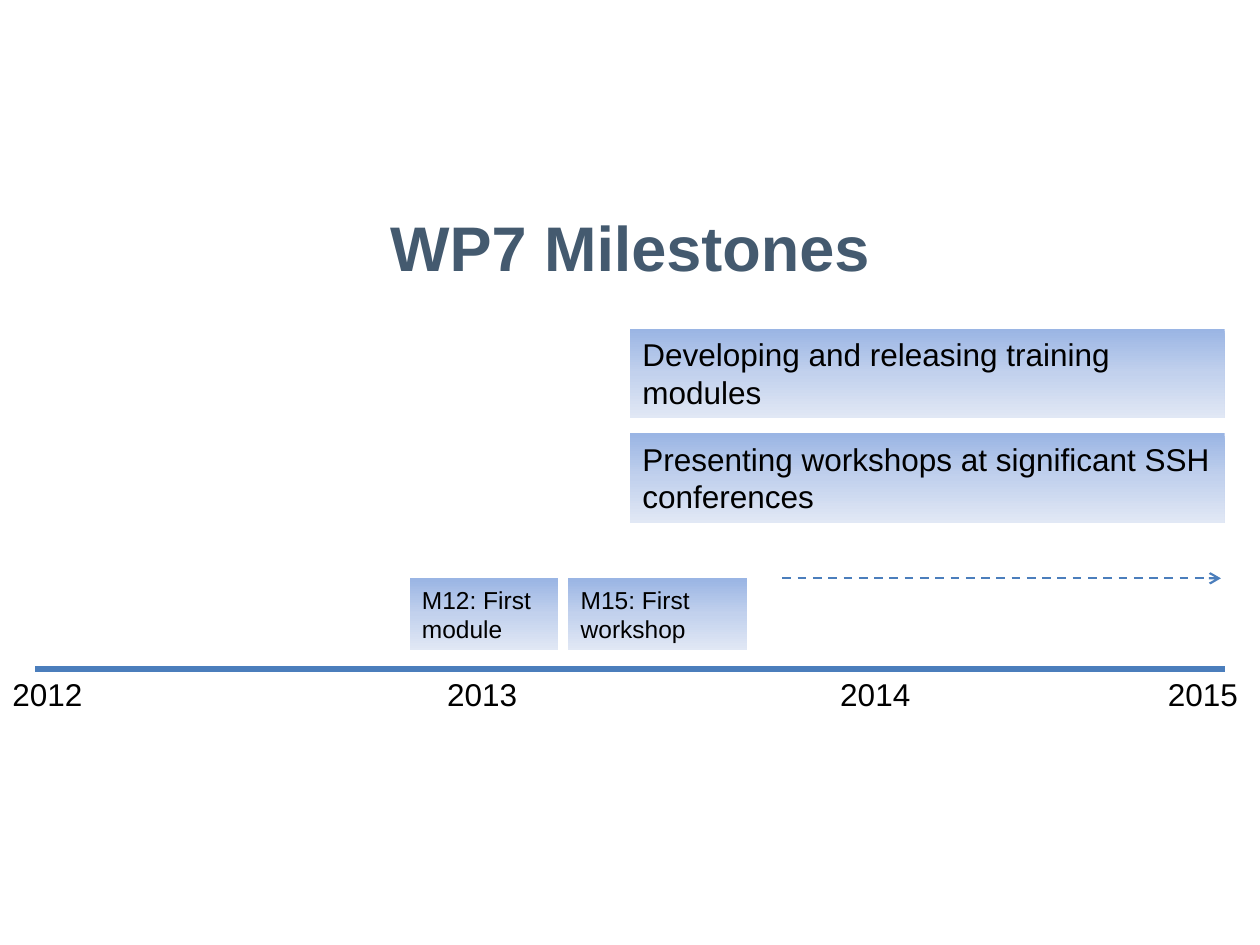
from copy import deepcopy

from lxml.etree import SubElement
from pptx import Presentation
from pptx.dml.color import RGBColor
from pptx.enum.dml import MSO_LINE_DASH_STYLE as DASH
from pptx.enum.shapes import MSO_CONNECTOR as CONN, MSO_SHAPE as SHAPE
from pptx.enum.text import MSO_ANCHOR as ANCHOR, MSO_AUTO_SIZE as AUTO, PP_ALIGN as ALIGN
from pptx.oxml.ns import qn
from pptx.util import Inches, Pt

GRADIENT = ((0, "9AB5E4"), (0.5, "C2D1ED"), (1, "E1E8F5"))
LINE, TITLE, INK = "4B7EBC", "445A6F", "000000"


def rgb(value):
    return RGBColor.from_string(value)


class Timeline:
    """Draws the parts of a milestone timeline in one style."""

    font = "Arial"

    def __init__(self, prs):
        self.s = prs.slides.add_slide(prs.slide_layouts[5])

    def set_text(self, sp, text, size, color=INK, align=ALIGN.LEFT, anchor=ANCHOR.TOP,
                 auto_size=AUTO.SHAPE_TO_FIT_TEXT, bold=False):
        tf = sp.text_frame
        for name, value in dict(word_wrap=True, auto_size=auto_size,
                                vertical_anchor=anchor).items():
            setattr(tf, name, value)
        p = tf.paragraphs[0]
        p.alignment = align
        r = p.add_run()
        r.text = text
        for name, value in dict(name=self.font, size=Pt(size), bold=bold).items():
            setattr(r.font, name, value)
        r.font.color.rgb = rgb(color)

    def title(self, text, x, y, w, h):
        sp = self.s.shapes.title
        for name, value in dict(left=x, top=y, width=w, height=h).items():
            setattr(sp, name, Inches(value))
        self.set_text(sp, text, 36, TITLE, ALIGN.CENTER, ANCHOR.MIDDLE, AUTO.NONE, True)

    def label(self, text, x, y, w, h=0.4):
        sp = self.s.shapes.add_textbox(*map(Inches, (x, y, w, h)))
        self.set_text(sp, text, 18)

    def box(self, text, x, y, w, h, size):
        sp = self.s.shapes.add_shape(SHAPE.RECTANGLE, *map(Inches, (x, y, w, h)))
        sp.shadow.inherit = False
        sp.line.fill.background()
        sp.fill.gradient()
        sp.fill.gradient_angle = 270
        first = next(sp._element.spPr.iter(qn("a:gs")))
        first.addnext(deepcopy(first))
        for stop, (position, color) in zip(sp.fill.gradient_stops, GRADIENT):
            stop.position = position
            stop.color.rgb = rgb(color)
        self.set_text(sp, text, size)

    def line(self, x1, x2, y, width, dash=None, arrow=False):
        sp = self.s.shapes.add_connector(CONN.STRAIGHT, *map(Inches, (x1, y, x2, y)))
        sp.line.color.rgb = rgb(LINE)
        sp.line.width = Pt(width)
        sp.line.dash_style = dash
        spPr = sp._element.spPr
        if arrow:
            SubElement(spPr.find(qn("a:ln")), qn("a:tailEnd"), type="arrow")
        SubElement(spPr, qn("a:effectLst"))


def main():
    prs = Presentation()
    prs.slide_width, prs.slide_height = Inches(10), Inches(7.5)
    t = Timeline(prs)
    axis_y, step_y, right = 5.31, 4.59, 9.72

    t.title("WP7 Milestones", 0.5, 1.33, 9, 1.25)
    t.line(0.28, right, axis_y, 3)
    for year, x, w in (("2012", 0, 0.94), ("2013", 3.45, 0.79),
                       ("2014", 6.57, 0.79), ("2015", 9.17, 0.83)):
        t.label(year, x, axis_y, w)
    for text, x, w in (("M12: First module", 3.25, 1.18),
                       ("M15: First workshop", 4.51, 1.42)):
        t.box(text, x, step_y, w, 0.57, 14)
    for text, y in (("Developing and releasing training modules", 2.61),
                    ("Presenting workshops at significant SSH conferences", 3.44)):
        t.box(text, 5, y, right - 5, 0.71, 18)
    t.line(6.21, 9.69, step_y, 1.25, DASH.DASH, arrow=True)
    prs.save("out.pptx")


if __name__ == "__main__":
    main()
